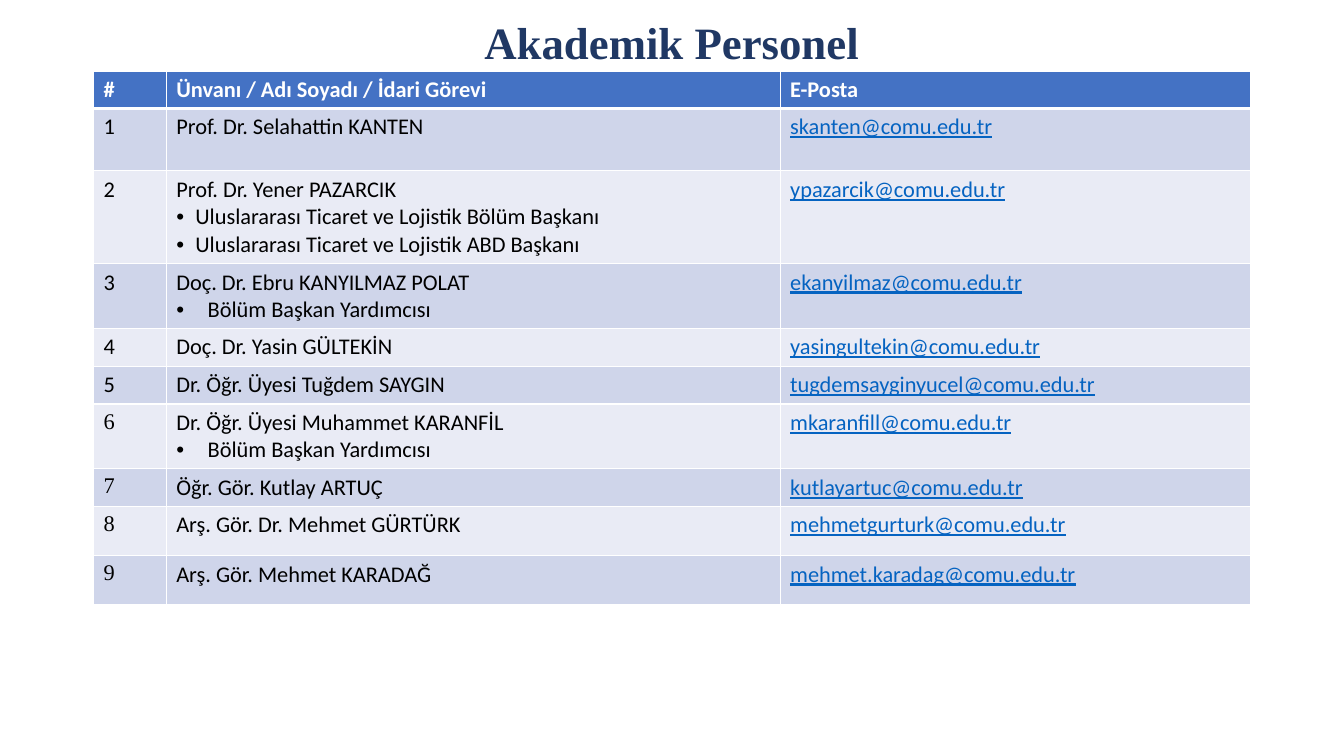
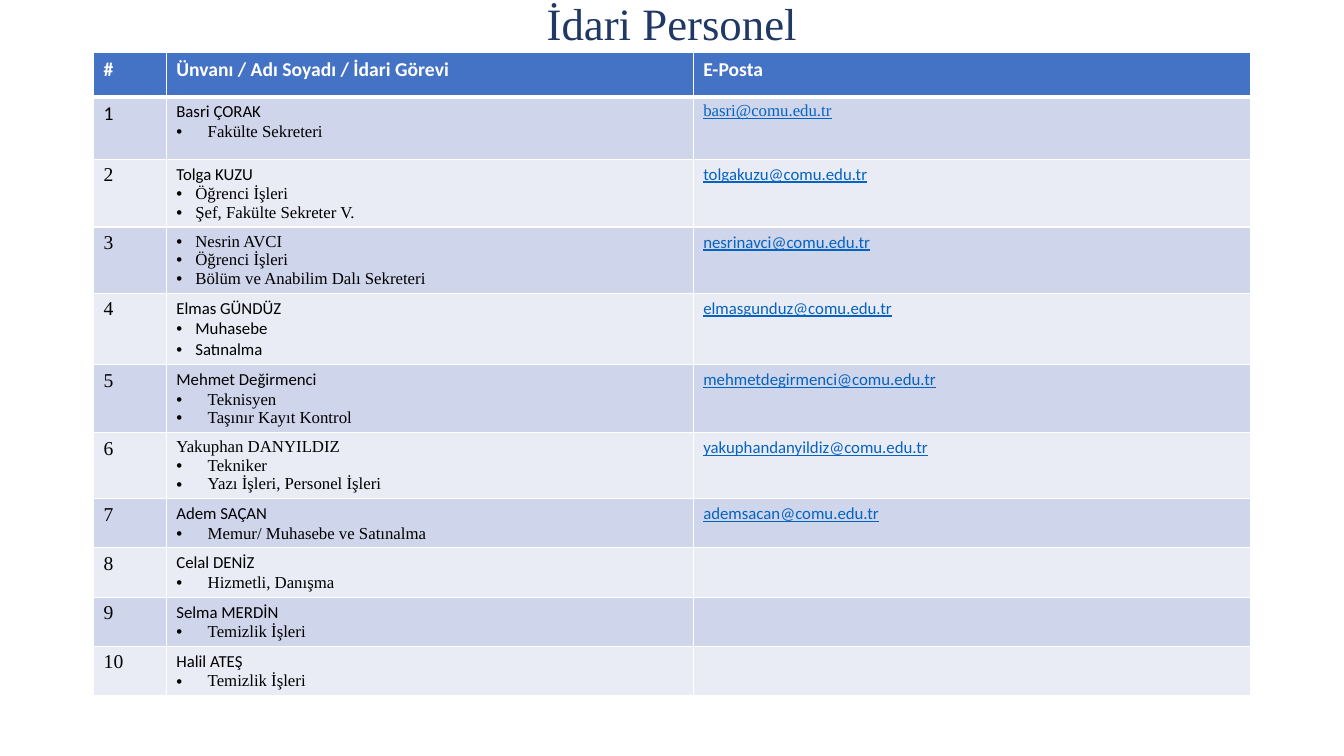
from dataclasses import dataclass
from functools import partial

from lxml import etree
from pptx import Presentation
from pptx.dml.color import RGBColor
from pptx.enum.text import MSO_ANCHOR, MSO_AUTO_SIZE, PP_ALIGN
from pptx.oxml.ns import qn
from pptx.util import Cm, Pt

CENTER = PP_ALIGN.CENTER
MIDDLE = MSO_ANCHOR.MIDDLE
NO_AUTOFIT = MSO_AUTO_SIZE.NONE

NAVY = RGBColor(0x20, 0x38, 0x64)
HEADER_BLUE = RGBColor(0x44, 0x72, 0xC4)
BAND_DARK = RGBColor(0xCF, 0xD5, 0xEA)
BAND_LIGHT = RGBColor(0xE9, 0xEB, 0xF5)
LINK_BLUE = RGBColor(0x05, 0x63, 0xC1)
WHITE = RGBColor(0xFF, 0xFF, 0xFF)
BLACK = RGBColor(0, 0, 0)

SANS = "Calibri"
SERIF = "Times New Roman"
NARROW = Cm(0.48)
WIDE = Cm(0.79)
THIN, THICK = Pt(1), Pt(3)

TABLE_LEFT = Cm(2.36)
HEADINGS = ("#", "Ünvanı / Adı Soyadı / İdari Görevi", "E-Posta")


@dataclass
class Staff:
    height: float
    name: str
    email: str = ""
    duties: tuple = ()
    indent: int = WIDE
    name_font: str = SANS
    duty_font: str = SANS
    email_font: str = SANS


AdminStaff = partial(Staff, duty_font=SERIF)

ACADEMIC_STAFF = [
    Staff(1.57, "Prof. Dr. Selahattin KANTEN", "skanten@comu.edu.tr"),
    Staff(2.34, "Prof. Dr. Yener PAZARCIK", "ypazarcik@comu.edu.tr",
          ("Uluslararası Ticaret ve Lojistik Bölüm Başkanı",
           "Uluslararası Ticaret ve Lojistik ABD Başkanı"), NARROW),
    Staff(1.63, "Doç. Dr. Ebru KANYILMAZ POLAT", "ekanyilmaz@comu.edu.tr",
          ("Bölüm Başkan Yardımcısı",)),
    Staff(0.95, "Doç. Dr. Yasin GÜLTEKİN", "yasingultekin@comu.edu.tr"),
    Staff(0.95, "Dr. Öğr. Üyesi Tuğdem SAYGIN", "tugdemsayginyucel@comu.edu.tr"),
    Staff(1.63, "Dr. Öğr. Üyesi Muhammet KARANFİL", "mkaranfill@comu.edu.tr",
          ("Bölüm Başkan Yardımcısı",)),
    Staff(0.95, "Öğr. Gör. Kutlay ARTUÇ", "kutlayartuc@comu.edu.tr"),
    Staff(1.24, "Arş. Gör. Dr. Mehmet GÜRTÜRK", "mehmetgurturk@comu.edu.tr"),
    Staff(1.24, "Arş. Gör. Mehmet KARADAĞ", "mehmet.karadag@comu.edu.tr"),
]

ADMIN_STAFF = [
    AdminStaff(1.57, "Basri ÇORAK", "basri@comu.edu.tr",
               ("Fakülte Sekreteri",), email_font=SERIF),
    AdminStaff(1.71, "Tolga KUZU", "tolgakuzu@comu.edu.tr",
               ("Öğrenci İşleri", "Şef, Fakülte Sekreter V."), NARROW),
    AdminStaff(1.66, "", "nesrinavci@comu.edu.tr",
               ("Nesrin AVCI", "Öğrenci İşleri", "Bölüm ve Anabilim Dalı Sekreteri"),
               NARROW),
    AdminStaff(1.79, "Elmas GÜNDÜZ", "elmasgunduz@comu.edu.tr",
               ("Muhasebe", "Satınalma"), NARROW, duty_font=SANS),
    AdminStaff(1.71, "Mehmet Değirmenci", "mehmetdegirmenci@comu.edu.tr",
               ("Teknisyen", "Taşınır Kayıt Kontrol")),
    AdminStaff(1.66, "Yakuphan DANYILDIZ", "yakuphandanyildiz@comu.edu.tr",
               ("Tekniker", "Yazı İşleri, Personel İşleri"), name_font=SERIF),
    AdminStaff(1.24, "Adem SAÇAN", "ademsacan@comu.edu.tr",
               ("Memur/ Muhasebe ve Satınalma",)),
    AdminStaff(1.24, "Celal DENİZ", duties=("Hizmetli, Danışma",)),
    AdminStaff(1.24, "Selma MERDİN", duties=("Temizlik İşleri",)),
    AdminStaff(1.24, "Halil ATEŞ", duties=("Temizlik İşleri",)),
]


def set_font(font, name, size, color, bold=False, underline=False):
    font.name, font.size = name, Pt(size)
    font.bold, font.underline = bold, underline
    font.color.rgb = color


def add_bullet(paragraph, indent):
    properties = paragraph._p.get_or_add_pPr()
    properties.set("marL", str(indent))
    properties.set("indent", str(-indent))
    etree.SubElement(properties, qn("a:buFont")).set("typeface", "Arial")
    etree.SubElement(properties, qn("a:buChar")).set("char", "•")


def style_cell(cell, fill, top=THIN, bottom=THIN):
    """Give the cell white borders and a plain fill."""
    properties = cell._tc.get_or_add_tcPr()
    for side, width in (("L", THIN), ("R", THIN), ("T", top), ("B", bottom)):
        border = etree.SubElement(properties, qn(f"a:ln{side}"), w=str(width))
        border_fill = etree.SubElement(border, qn("a:solidFill"))
        etree.SubElement(border_fill, qn("a:srgbClr"), val=str(WHITE))
    cell.fill.solid()
    cell.fill.fore_color.rgb = fill


def write_cell(cell, text, *font_args, **font_options):
    cell.text = text
    set_font(cell.text_frame.paragraphs[0].font, *font_args, **font_options)


def write_person(cell, person, size):
    """Write the name, then the duties as bullets."""
    lines = [(duty, person.duty_font, True) for duty in person.duties]
    if person.name:
        lines.insert(0, (person.name, person.name_font, False))
    frame = cell.text_frame
    for index, (text, font_name, bulleted) in enumerate(lines):
        paragraph = frame.add_paragraph() if index else frame.paragraphs[0]
        if bulleted:
            add_bullet(paragraph, person.indent)
        paragraph.text = text
        set_font(paragraph.font, font_name, size, BLACK)


def add_title(slide, text, box, bold):
    title = slide.shapes.title
    title.left, title.top, title.width, title.height = (Cm(v) for v in box)
    frame = title.text_frame
    frame.auto_size = NO_AUTOFIT
    frame.vertical_anchor = MIDDLE
    frame.text = text
    paragraph = frame.paragraphs[0]
    paragraph.alignment = CENTER
    paragraph.line_spacing = 0.9
    set_font(paragraph.font, SERIF, 32, NAVY, bold)


def add_staff_table(slide, staff, top, columns, header_height, head_size,
                    body_size, serif_from):
    """Draw the staff list; row numbers are in serif from serif_from on."""
    heights = [Cm(header_height)] + [Cm(person.height) for person in staff]
    widths = [Cm(width) for width in columns]
    table = slide.shapes.add_table(len(heights), len(widths), TABLE_LEFT, Cm(top),
                                   sum(widths), sum(heights)).table
    for column, width in zip(table.columns, widths):
        column.width = width
    for row, height in zip(table.rows, heights):
        row.height = height

    for cell, heading in zip(table.rows[0].cells, HEADINGS):
        style_cell(cell, HEADER_BLUE, bottom=THICK)
        write_cell(cell, heading, SANS, head_size, WHITE, bold=True)

    for number, person in enumerate(staff, 1):
        cells = list(table.rows[number].cells)
        for cell in cells:
            style_cell(cell, BAND_DARK if number % 2 else BAND_LIGHT,
                       top=THICK if number == 1 else THIN)
        number_cell, person_cell, email_cell = cells
        write_cell(number_cell, str(number),
                   SERIF if number >= serif_from else SANS, head_size, BLACK)
        write_person(person_cell, person, body_size)
        write_cell(email_cell, person.email, person.email_font, body_size,
                   LINK_BLUE, underline=True)


def add_staff_slide(prs, title, title_box, bold, staff, **table_options):
    slide = prs.slides.add_slide(prs.slide_layouts[5])
    add_title(slide, title, title_box, bold)
    add_staff_table(slide, staff, **table_options)


def main():
    prs = Presentation()
    prs.slide_width, prs.slide_height = Cm(33.87), Cm(19.05)
    add_staff_slide(prs, "Akademik Personel", (8.66, 0, 16.54, 2.29), True,
                    ACADEMIC_STAFF, top=1.79, columns=(1.83, 15.47, 11.86),
                    header_height=0.92, head_size=16, body_size=16, serif_from=6)
    add_staff_slide(prs, "İdari Personel", (4.19, 0, 25.48, 1.32), False,
                    ADMIN_STAFF, top=1.32, columns=(1.83, 13.28, 14.05),
                    header_height=1.12, head_size=14, body_size=12, serif_from=2)
    prs.save("out.pptx")


if __name__ == "__main__":
    main()
